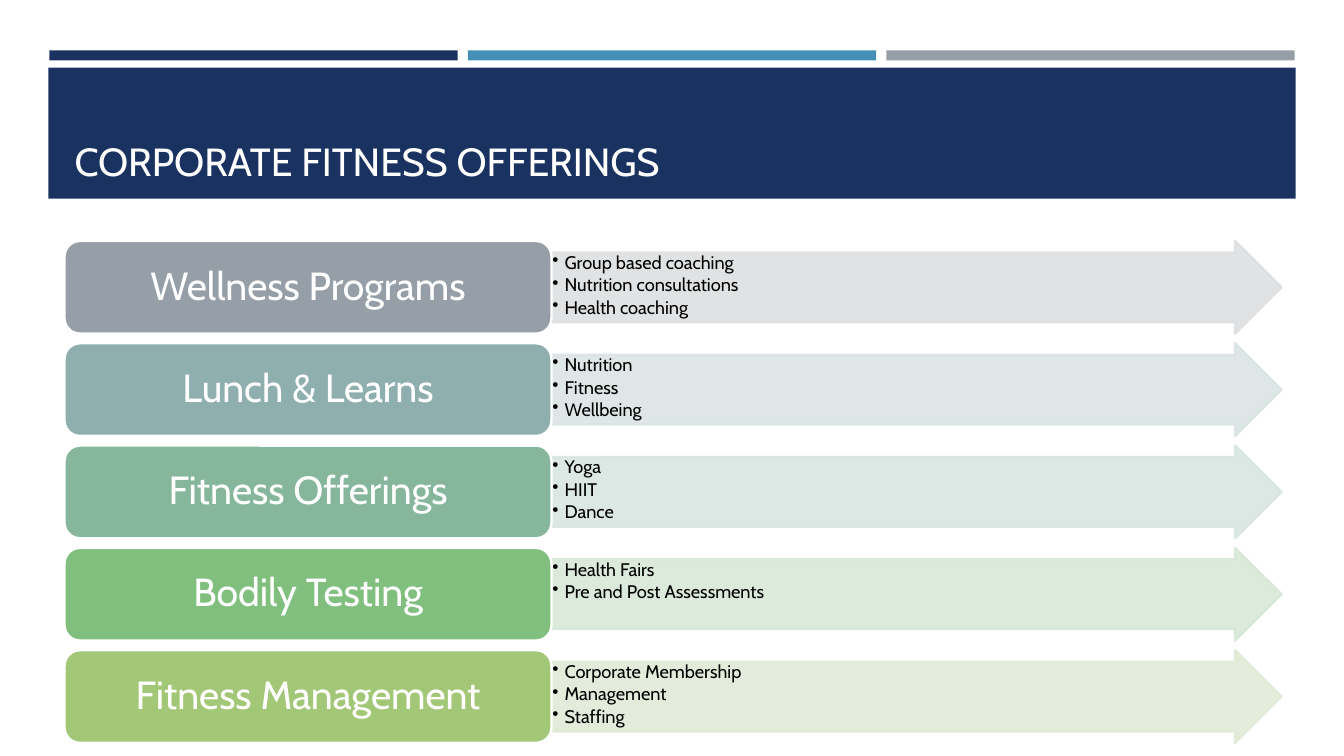
"""Build the corporate fitness offerings slide."""
from dataclasses import dataclass

from lxml.etree import SubElement
from pptx import Presentation
from pptx.dml.color import RGBColor
from pptx.enum.shapes import MSO_SHAPE as Kind
from pptx.enum.text import MSO_ANCHOR as Anchor, PP_ALIGN as Align
from pptx.oxml.ns import qn
from pptx.util import Inches, Pt

TITLE = "CORPORATE FITNESS OFFERINGS"
ROWS = [
    ("Wellness Programs", "969FA7", "DDDFE1",
     ["Group based coaching", "Nutrition consultations", "Health coaching"]),
    ("Lunch & Learns", "8EAFAE", "DBE4E4",
     ["Nutrition", "Fitness", "Wellbeing"]),
    ("Fitness Offerings", "86B79D", "D9E6E0",
     ["Yoga", "HIIT", "Dance"]),
    ("Bodily Testing", "81BF7F", "D8E8D8",
     ["Health Fairs", "Pre and Post Assessments"]),
    ("Fitness Management", "A2C777", "E0EBD6",
     ["Corporate Membership", "Management", "Staffing"]),
]


@dataclass(frozen=True)
class Theme:
    """Colours, font and sizes."""
    navy: str = "1A3260"
    blue: str = "4590B8"
    gray: str = "969FA7"
    white: str = "FFFFFF"
    black: str = "000000"
    font: str = "Cabin"
    head: int = 28
    body: int = 13
    edge: float = 1.75
    alpha: int = 90


LOOK = Theme()
LEFT, TOP, LAST = 0.64, 2.39, 6.45
LABEL, ARROW, HIGH = 4.83, 7.24, 0.92
PITCH = (LAST - TOP) / (len(ROWS) - 1)


def add_box(slide, kind, at, fill, line=None):
    """Add a filled preset shape."""
    box = slide.shapes.add_shape(kind, *map(Inches, at))
    box.shadow.inherit = False
    box.fill.solid()
    box.fill.fore_color.rgb = RGBColor.from_string(fill)
    if line:
        box.line.color.rgb = RGBColor.from_string(line)
        box.line.width = Pt(LOOK.edge)
    else:
        box.line.fill.background()
    return box


def add_run(para, text, size, color):
    """Add one styled run."""
    run = para.add_run()
    run.text = text
    run.font.name = LOOK.font
    run.font.size = Pt(size)
    run.font.color.rgb = RGBColor.from_string(color)


def set_frame(frame, anchor, side, end):
    """Set wrapping, anchor and insets."""
    frame.word_wrap = True
    frame.vertical_anchor = anchor
    frame.margin_left = frame.margin_right = Inches(side)
    frame.margin_top = frame.margin_bottom = Inches(end)


def add_bullet(para):
    """Give a paragraph a hanging bullet."""
    props = para._p.get_or_add_pPr()
    props.set("marL", str(Inches(0.12)))
    props.set("indent", str(-Inches(0.12)))
    SubElement(props, qn("a:buChar")).set("char", "•")


def add_head(slide):
    """Draw the bars and band, then place the title on them."""
    for i, color in enumerate((LOOK.navy, LOOK.blue, LOOK.gray)):
        add_box(slide, Kind.RECTANGLE, (0.49 + 4.15 * i, 0.5, 4.05, 0.1), color)
    add_box(slide, Kind.RECTANGLE, (0.48, 0.67, 12.37, 1.3), LOOK.navy)
    title = slide.shapes.title
    title.element.getparent().append(title.element)
    title.left, title.top = Inches(LEFT), Inches(0.77)
    title.width, title.height = Inches(12.06), Inches(1.11)
    set_frame(title.text_frame, Anchor.BOTTOM, 0.1, 0.05)
    para = title.text_frame.paragraphs[0]
    para.alignment = Align.LEFT
    add_run(para, TITLE, LOOK.head, LOOK.white)


def add_arrow(slide, top, tint, items):
    """Draw a pale arrow holding a bullet list."""
    at = (LEFT + LABEL, top, ARROW, HIGH)
    arrow = add_box(slide, Kind.RIGHT_ARROW, at, tint, tint)
    arrow.adjustments[0], arrow.adjustments[1] = 0.75, 0.5
    for color in arrow.element.spPr.iter(qn("a:srgbClr")):
        SubElement(color, qn("a:alpha")).set("val", str(LOOK.alpha * 1000))
    frame = arrow.text_frame
    set_frame(frame, Anchor.TOP, 0.01, 0.01)
    for i, item in enumerate(items):
        para = frame.add_paragraph() if i else frame.paragraphs[0]
        para.level = 1
        para.alignment = Align.LEFT
        para.line_spacing = 0.9
        para.space_after = Pt(2)
        add_bullet(para)
        add_run(para, item, LOOK.body, LOOK.black)


def add_label(slide, top, name, fill):
    """Draw a rounded label."""
    at = (LEFT, top, LABEL, HIGH)
    label = add_box(slide, Kind.ROUNDED_RECTANGLE, at, fill, LOOK.white)
    set_frame(label.text_frame, Anchor.MIDDLE, 0.12, 0.06)
    para = label.text_frame.paragraphs[0]
    para.alignment = Align.CENTER
    para.line_spacing = 0.9
    add_run(para, name, LOOK.head, LOOK.white)


def main():
    """Build and save the deck."""
    deck = Presentation()
    deck.slide_width, deck.slide_height = Inches(13.33), Inches(7.5)
    slide = deck.slides.add_slide(deck.slide_layouts[5])
    add_head(slide)
    for i, (name, fill, tint, items) in enumerate(ROWS):
        top = TOP + PITCH * i
        add_arrow(slide, top, tint, items)
        add_label(slide, top, name, fill)
    deck.save("out.pptx")


if __name__ == "__main__":
    main()
